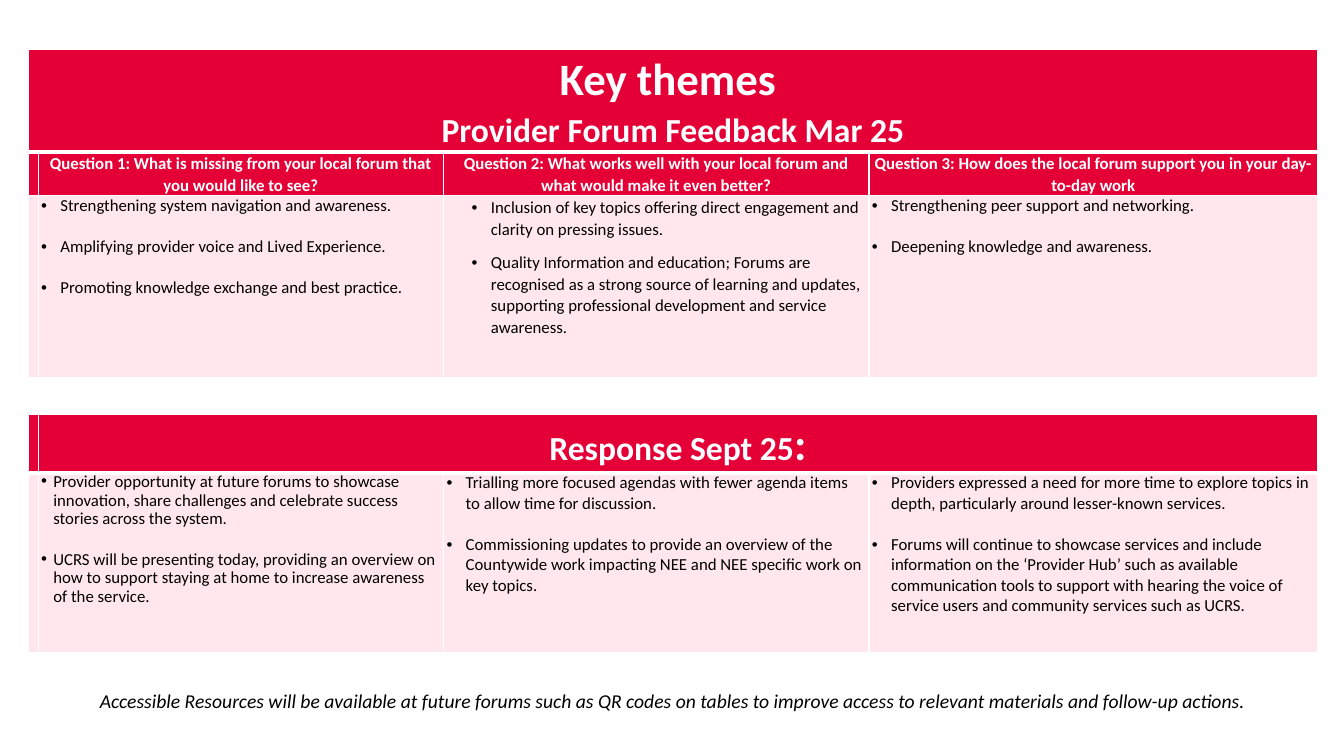
from lxml.etree import SubElement
from pptx import Presentation
from pptx.dml.color import RGBColor
from pptx.enum.text import PP_ALIGN as Align
from pptx.oxml.ns import qn
from pptx.util import Inches, Pt

RED, PINK, WHITE, BLACK = "E40037", "FFE7ED", "FFFFFF", "000000"
COLUMN_WIDTHS = [0.08, 4.02, 4.22, 4.45]


def write(para, text, size=12, color=BLACK, bold=False, italic=False,
          align=Align.LEFT, spacing=1.0, after=0, hang=0, left=0):
    """Add a formatted span to a paragraph; a hang above zero makes it a bullet."""
    para.alignment = align
    para.line_spacing = spacing
    para.space_after = Pt(after)
    span = para.add_run()
    span.text = text
    font = span.font
    font.name, font.size, font.bold, font.italic = "Calibri", Pt(size), bold, italic
    font.color.rgb = RGBColor.from_string(color)
    if hang:
        props = para._p.get_or_add_pPr()
        props.set("marL", str(Inches(left or hang)))
        props.set("indent", str(-Inches(hang)))
        SubElement(props, qn("a:buFont"), typeface="Arial")
        SubElement(props, qn("a:buChar"), char="•")


def add_grid(page, top, row_heights, fills):
    """Add a table with white borders, thick under its first row."""
    frame = page.shapes.add_table(
        len(row_heights), len(COLUMN_WIDTHS), Inches(0.28), Inches(top),
        Inches(sum(COLUMN_WIDTHS)), Inches(sum(row_heights)))
    table = frame.table
    table.first_row = table.horz_banding = False
    for column, width in zip(table.columns, COLUMN_WIDTHS):
        column.width = Inches(width)
    for index, (row, height, fill) in enumerate(zip(table.rows, row_heights, fills)):
        row.height = Inches(height)
        for cell in row.cells:
            cell.margin_left = cell.margin_right = Inches(0.03)
            cell.margin_top = cell.margin_bottom = 0
            for side in "LRTB":
                thick = (index, side) in [(0, "B"), (1, "T")]
                line = SubElement(cell._tc.get_or_add_tcPr(), qn(f"a:ln{side}"),
                                  w=str(Pt(3 if thick else 1)))
                SubElement(SubElement(line, qn("a:solidFill")),
                           qn("a:srgbClr"), val=WHITE)
            cell.fill.solid()
            cell.fill.fore_color.rgb = RGBColor.from_string(fill)
    return table


deck = Presentation()
deck.slide_width, deck.slide_height = Inches(13.33), Inches(7.5)
page = deck.slides.add_slide(deck.slide_layouts[6])

heading = dict(color=WHITE, bold=True, align=Align.CENTER, spacing=1.07)
plain = dict(hang=0.19, after=14.6)
indented = dict(hang=0.19, left=0.44, spacing=1.07, after=8)
compact = dict(hang=0.12, spacing=0.9, after=16)

questions = [
    "Question 1: What is missing from your local forum that you would like to see?",
    "Question 2: What works well with your local forum and what would make it even better?",
    "Question 3: How does the local forum support you in your day-to-day work",
]
themes = [
    (plain, ["Strengthening system navigation and awareness.",
             "Amplifying provider voice and Lived Experience.",
             "Promoting knowledge exchange and best practice."]),
    (indented, ["Inclusion of key topics offering direct engagement and clarity on "
                "pressing issues.",
                "Quality Information and education; Forums are recognised as a strong "
                "source of learning and updates, supporting professional development "
                "and service awareness."]),
    (plain, ["Strengthening peer support and networking.",
             "Deepening knowledge and awareness."]),
]
responses = [
    (compact, ["Provider opportunity at future forums to showcase innovation, share "
               "challenges and celebrate success stories across the system.",
               "UCRS will be presenting today, providing an overview on how to support "
               "staying at home to increase awareness of the service."]),
    (plain, ["Trialling more focused agendas with fewer agenda items to allow time for "
             "discussion.",
             "Commissioning updates to provide an overview of the Countywide work "
             "impacting NEE and NEE specific work on key topics."]),
    (plain, ["Providers expressed a need for more time to explore topics in depth, "
             "particularly around lesser-known services.",
             "Forums will continue to showcase services and include information on the "
             "‘Provider Hub’ such as available communication tools to support with "
             "hearing the voice of service users and community services such as UCRS."]),
]

# Feedback table
feedback = add_grid(page, 0.49, [1.01, 0.43, 1.8], [RED, RED, PINK])
title = feedback.cell(0, 0)
title.merge(feedback.cell(0, 3))
para = title.text_frame.paragraphs[0]
write(para, "Key themes ", size=32, **heading)
para.add_line_break()
write(para, "Provider Forum Feedback Mar 25", size=24, **heading)
for column, question in enumerate(questions, 1):
    write(feedback.cell(1, column).text_frame.paragraphs[0], question, **heading)

# Response table
response = add_grid(page, 4.11, [0.56, 1.78], [RED, PINK])
title = response.cell(0, 1)
title.merge(response.cell(0, 3))
para = title.text_frame.paragraphs[0]
write(para, "Response Sept 25", size=24, **heading)
write(para, ":", size=32, **heading)

# Bulleted cells of both tables
for table, row, columns in [(feedback, 2, themes), (response, 1, responses)]:
    for column, (style, points) in enumerate(columns, 1):
        frame = table.cell(row, column).text_frame
        for index, point in enumerate(points):
            para = frame.add_paragraph() if index else frame.paragraphs[0]
            write(para, point, **style)

# Closing note
box = page.shapes.add_textbox(Inches(0.99), Inches(6.83), Inches(11.83), Inches(0.36))
frame = box.text_frame
frame.word_wrap = True
frame.margin_left = frame.margin_right = frame.margin_top = frame.margin_bottom = 0
write(frame.paragraphs[0],
      "Accessible Resources will be available at future forums such as QR codes on "
      "tables to improve access to relevant materials and follow-up actions.",
      size=14, italic=True, after=11.3)

deck.save("out.pptx")
